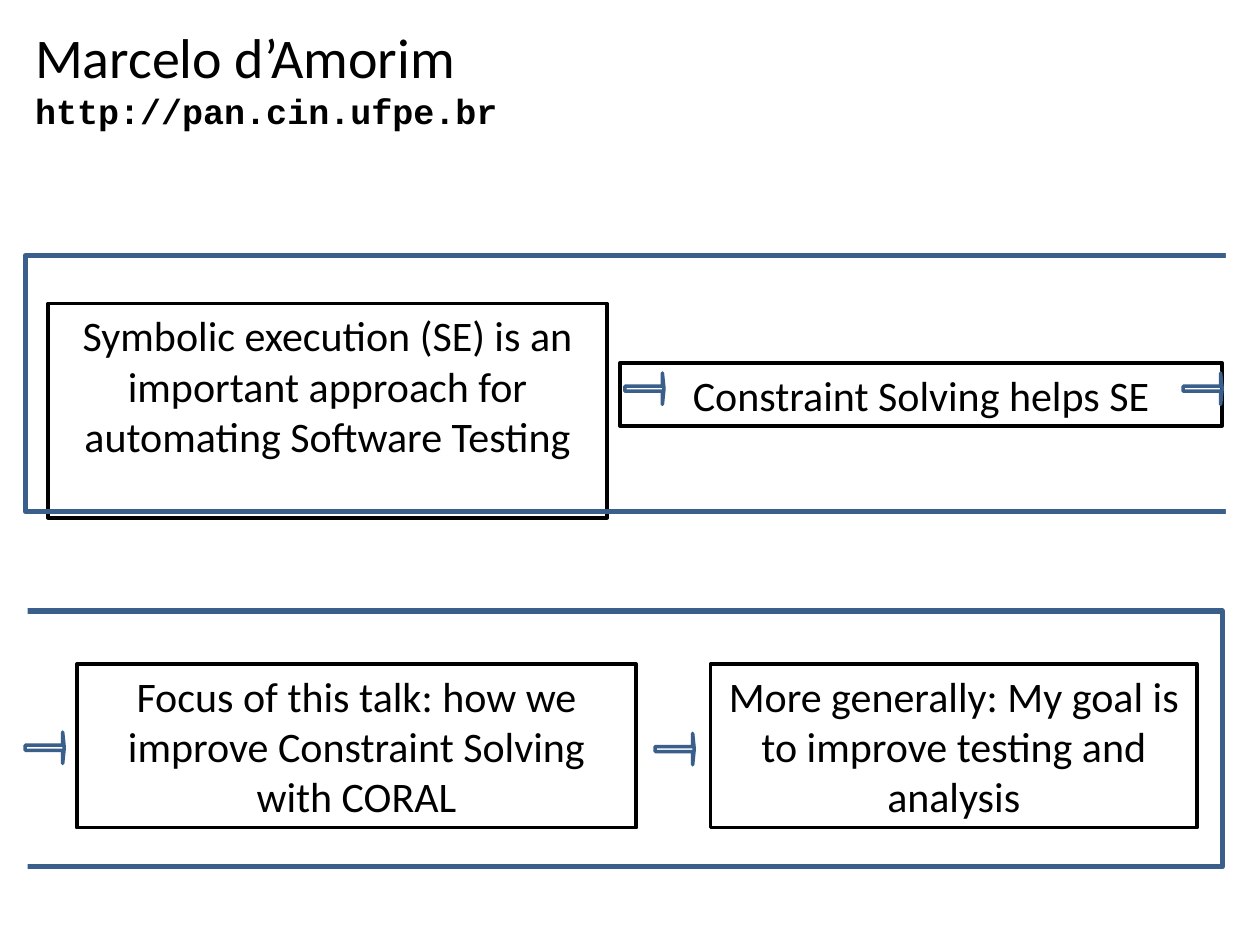
from pptx import Presentation
from pptx.dml.color import RGBColor
from pptx.enum.shapes import MSO_SHAPE as SHAPE
from pptx.enum.text import MSO_ANCHOR as ANCHOR, PP_ALIGN as ALIGN
from pptx.util import Inches, Pt

prs = Presentation()
prs.slide_width, prs.slide_height = Inches(10), Inches(7.5)
COL, ROW = prs.slide_width / 100, prs.slide_height / 75
s = prs.slides.add_slide(prs.slide_layouts[6])

BLACK, WHITE, BLUE = "000000", "FFFFFF", "3A5F8B"


def rgb(value):
    return RGBColor.from_string(value)


def add_box(kind, x, y, w, h, fill=None, line=None, width=2):
    """Add a preset shape placed in grid columns and rows."""
    sp = s.shapes.add_shape(kind, int(x * COL), int(y * ROW), int(w * COL), int(h * ROW))
    sp.shadow.inherit = False
    if fill:
        sp.fill.solid()
        sp.fill.fore_color.rgb = rgb(fill)
    else:
        sp.fill.background()
    if line:
        sp.line.color.rgb = rgb(line)
        sp.line.width = Pt(width)
    else:
        sp.line.fill.background()
    return sp


# Speaker and address
tf = s.shapes.add_textbox(int(1.8 * COL), int(1.3 * ROW), int(70 * COL), int(22 * ROW)).text_frame
tf.word_wrap = True
tf.text = "Marcelo d’Amorim\nhttp://pan.cin.ufpe.br"
for p, (font, size, bold) in zip(tf.paragraphs, [("Calibri", 32, False), ("Courier New", 20, True)]):
    p.font.name, p.font.size, p.font.bold = font, Pt(size), bold
    p.font.color.rgb = rgb(BLACK)

# Steps of the argument
steps = [
    (3.8, 24.1, 44.4, 17, True, "Symbolic execution (SE) is an important approach for automating Software Testing"),
    (49.2, 28.8, 47.8, 5, False, "Constraint Solving helps SE"),
    (6.1, 52.7, 44.4, 13, True, "Focus of this talk: how we improve Constraint Solving with CORAL"),
    (56.4, 52.7, 38.6, 13, True, "More generally: My goal is to improve testing and analysis"),
]
for x, y, w, h, wrap, text in steps:
    tf = add_box(SHAPE.RECTANGLE, x, y, w, h, WHITE, BLACK).text_frame
    tf.word_wrap = wrap
    tf.vertical_anchor = ANCHOR.TOP
    tf.text = text
    p = tf.paragraphs[0]
    p.alignment = ALIGN.CENTER
    p.font.name, p.font.size = "Calibri", Pt(24)
    p.font.color.rgb = rgb(BLACK)

# Frames, each opened on one side by a white strip
for frame_x, frame_y, strip_x, strip_y in [(2, 20.3, 97.3, 19.4), (0.8, 48.5, 0.4, 46.8)]:
    add_box(SHAPE.RECTANGLE, frame_x, frame_y, 96.2, 20.3, line=BLUE, width=3)
    add_box(SHAPE.RECTANGLE, strip_x, strip_y, 1.8, 25.7, fill=WHITE)

# Arrows between steps
for x, y in [(49.6, 29.6), (93.9, 29.6), (2, 58.1), (52, 58.2)]:
    sp = add_box(SHAPE.RIGHT_ARROW, x, y, 3.1, 2.5, line=BLUE)
    sp.adjustments[0], sp.adjustments[1] = 0.16, 0.05

prs.save("out.pptx")
